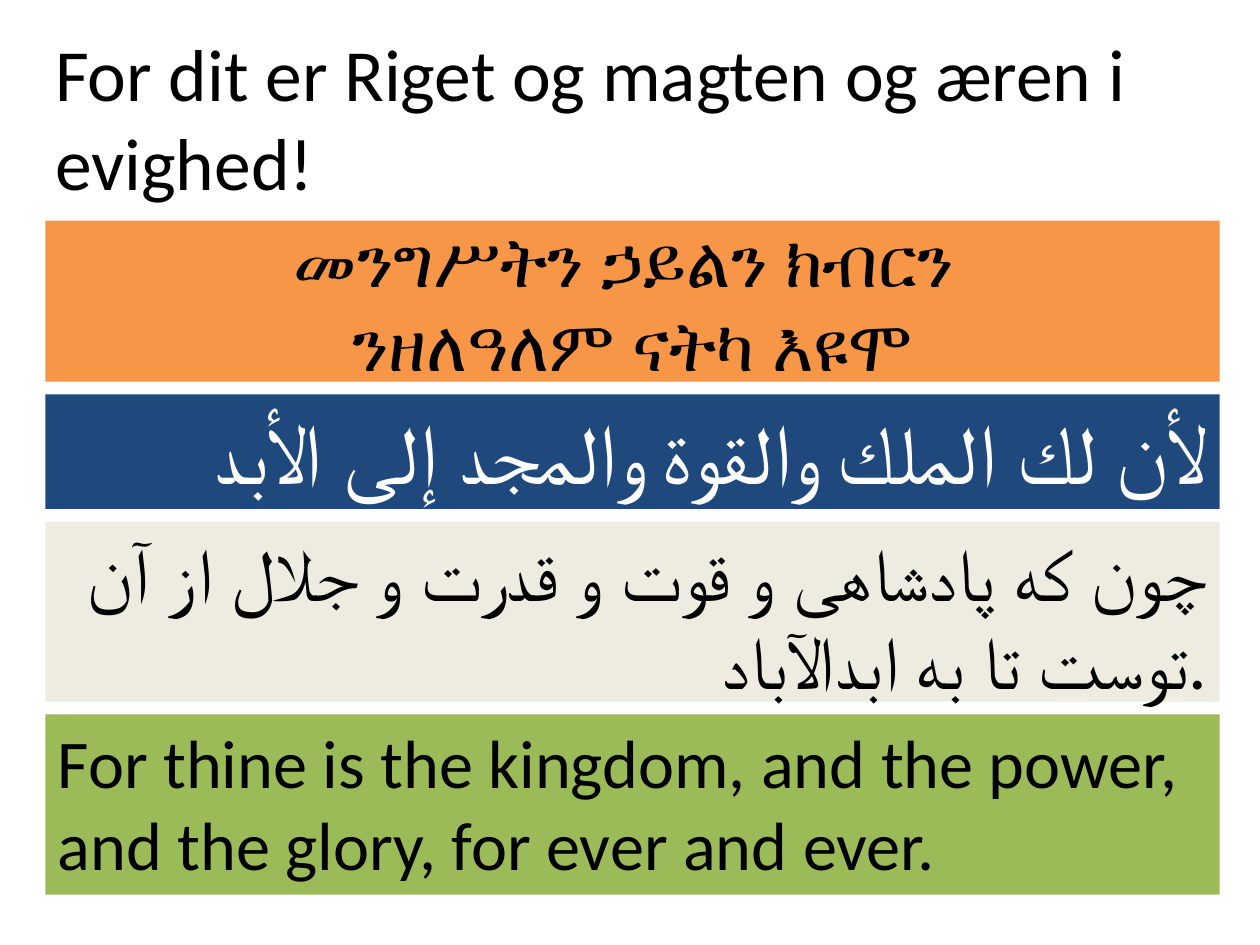
from dataclasses import dataclass

from pptx import Presentation
from pptx.dml.color import RGBColor
from pptx.enum import shapes, text
from pptx.util import Pt

LEFT, WIDTH = 25.92, 671.04
FIRST_TOP, GAP = 126, 7.2
ALIGN = text.PP_ALIGN
ANCHOR = text.MSO_ANCHOR


@dataclass(frozen=True)
class Verse:
    lines: tuple[str, ...]
    height: float
    size: float
    fill: str = ""
    color: str = "000000"
    align: ALIGN = ALIGN.LEFT
    anchor: ANCHOR = ANCHOR.TOP


DANISH = Verse(("For dit er Riget og magten og æren i evighed!",),
               115.92, 42, anchor=ANCHOR.MIDDLE)
TRANSLATIONS = (
    Verse(("መንግሥትን ኃይልን ክብርን ", "ንዘለዓለም ናትካ እዩሞ"),
          92.16, 40, "F79646", align=ALIGN.CENTER, anchor=ANCHOR.MIDDLE),
    Verse(("لأن لك الملك والقوة والمجد إلى الأبد",),
          65.52, 48, "1F497D", "FFFFFF", ALIGN.RIGHT),
    Verse((" چون که پادشاهی و قوت و قدرت و جلال از آن توست تا به ابدالآباد.",),
          102.96, 42, "EEECE1", align=ALIGN.RIGHT),
    Verse(("For thine is the kingdom, and the power,",
           "and the glory, for ever and ever."),
          102.96, 39, "9BBB59"),
)


def paint(color_format, hex_color: str) -> None:
    color_format.rgb = RGBColor.from_string(hex_color)


def write_verse(frame, verse: Verse) -> None:
    frame_format = {
        "word_wrap": True, "vertical_anchor": verse.anchor,
        "margin_left": Pt(7.2), "margin_right": Pt(7.2),
        "margin_top": Pt(3.6), "margin_bottom": Pt(3.6),
    }
    for name, value in frame_format.items():
        setattr(frame, name, value)
    frame.text = "\n".join(verse.lines)
    for line in frame.paragraphs:
        line.alignment = verse.align
        for run in line.runs:
            for name, value in {"name": "Calibri", "size": Pt(verse.size)}.items():
                setattr(run.font, name, value)
            paint(run.font.color, verse.color)


def add_band(slide, verse: Verse, top: float) -> None:
    band = slide.shapes.add_shape(shapes.MSO_SHAPE.RECTANGLE, Pt(LEFT), Pt(top),
                                  Pt(WIDTH), Pt(verse.height))
    band.shadow.inherit = False
    band.fill.solid()
    paint(band.fill.fore_color, verse.fill)
    band.line.fill.background()
    write_verse(band.text_frame, verse)


def main() -> None:
    deck = Presentation()
    deck.slide_width, deck.slide_height = Pt(720), Pt(540)
    slide = deck.slides.add_slide(deck.slide_layouts[6])

    heading = slide.shapes.add_textbox(Pt(24.48), Pt(8.64), Pt(WIDTH), Pt(DANISH.height))
    write_verse(heading.text_frame, DANISH)

    top = FIRST_TOP
    for verse in TRANSLATIONS:
        add_band(slide, verse, top)
        top += verse.height + GAP

    deck.save("out.pptx")


if __name__ == "__main__":
    main()
